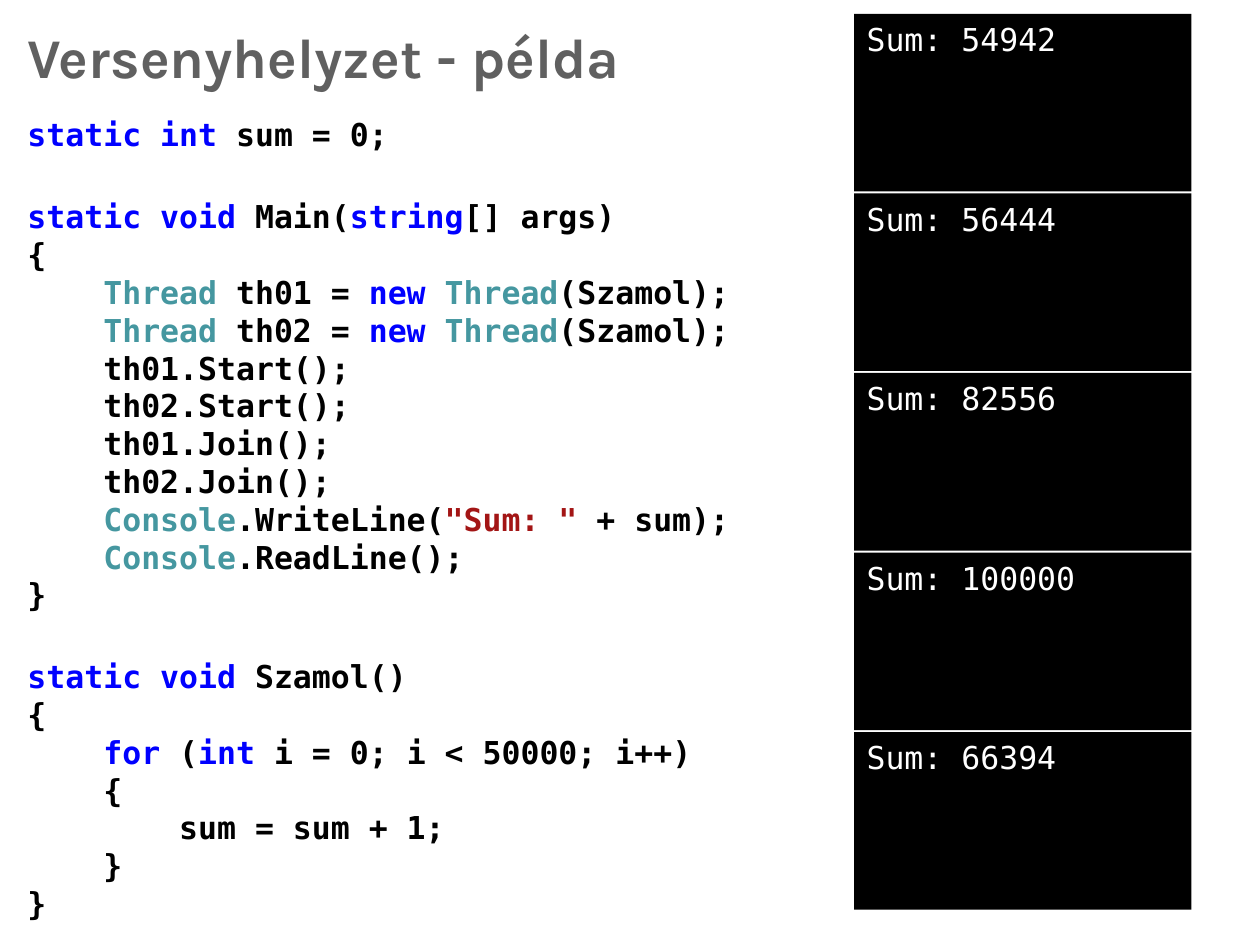
"""Build the race condition example slide."""
from dataclasses import dataclass
from itertools import groupby

from lxml.etree import SubElement
from pptx import Presentation
from pptx.dml.color import RGBColor as Rgb
from pptx.enum.shapes import MSO_SHAPE as Preset
from pptx.enum.text import MSO_ANCHOR as Anchor, MSO_AUTO_SIZE as AutoSize, PP_ALIGN as Align
from pptx.oxml.ns import qn
from pptx.util import Cm, Pt


@dataclass(frozen=True)
class Theme:
    """Colours, fonts and type sizes of the slide."""
    white: str = "FFFFFF"
    black: str = "000000"
    heading: str = "606060"
    keyword: str = "0000FF"
    type_name: str = "4597A0"
    string: str = "A31515"
    heading_font: str = "Karla"
    code_font: str = "DejaVu Sans Mono"
    heading_size: int = 32
    code_size: int = 18
    block_gap: float = 25.2


THEME = Theme()
KEYWORDS = {"static", "int", "void", "string", "new", "for"}
TYPE_NAMES = {"Thread", "Console"}
CODE_BLOCKS = [
    "static int sum = 0;",
    """static void Main(string[] args)
{
    Thread th01 = new Thread(Szamol);
    Thread th02 = new Thread(Szamol);
    th01.Start();
    th02.Start();
    th01.Join();
    th02.Join();
    Console.WriteLine("Sum: " + sum);
    Console.ReadLine();
}""",
    """static void Szamol()
{
    for (int i = 0; i < 50000; i++)
    {
        sum = sum + 1;
    }
}""",
]
OUTPUTS = ["Sum: 54942", "Sum: 56444", "Sum: 82556", "Sum: 100000", "Sum: 66394"]


def apply(target, values):
    """Set each attribute in values on the target."""
    for name, value in values.items():
        setattr(target, name, value)


def place(shape, left, top, width, height):
    """Move and size a shape, with lengths in centimetres."""
    apply(shape, {"left": Cm(left), "top": Cm(top), "width": Cm(width), "height": Cm(height)})


def fill(shape, colour):
    """Give a shape a solid fill."""
    shape.fill.solid()
    shape.fill.fore_color.rgb = Rgb.from_string(colour)


def set_frame(shape, anchor):
    """Set wrapping and anchoring of the text in a shape."""
    apply(shape.text_frame, {"word_wrap": True, "auto_size": AutoSize.NONE,
                             "vertical_anchor": anchor})


def add_run(paragraph, text, font, size, colour, bold):
    """Append formatted text to a left-aligned paragraph."""
    paragraph.alignment = Align.LEFT
    run = paragraph.add_run()
    run.text = text
    apply(run.font, {"name": font, "size": Pt(size), "bold": bold})
    run.font.color.rgb = Rgb.from_string(colour)


def word_colour(word):
    """Return the syntax colour of a word."""
    if word in KEYWORDS:
        return THEME.keyword
    return THEME.type_name if word in TYPE_NAMES else THEME.black


def colour_pieces(line):
    """Yield the words, strings and symbols of a code line with their colours."""
    for index, part in enumerate(line.split('"')):
        if index % 2:
            yield f'"{part}"', THEME.string
        else:
            for _, letters in groupby(part, str.isalnum):
                word = "".join(letters)
                yield word, word_colour(word)


def add_code_line(paragraph, line, space_before):
    """Write one highlighted code line without a bullet."""
    properties = paragraph._p.get_or_add_pPr()
    properties.set("marL", "0")
    properties.set("indent", "0")
    SubElement(properties, qn("a:buNone"))
    apply(paragraph, {"space_before": Pt(space_before), "space_after": Pt(0)})
    for colour, pieces in groupby(colour_pieces(line), lambda piece: piece[1]):
        text = "".join(piece[0] for piece in pieces)
        add_run(paragraph, text, THEME.code_font, THEME.code_size, colour, True)


def write_title(title, text):
    """Place and write the slide title."""
    place(title, 0.3, 0.33, 24.8, 1.6)
    set_frame(title, Anchor.MIDDLE)
    add_run(title.text_frame.paragraphs[0], text, THEME.heading_font,
            THEME.heading_size, THEME.heading, True)


def write_code(body, blocks):
    """Place the body and write code blocks separated by paragraph spacing."""
    place(body, 0.3, 2.2, 24.8, 16.5)
    fill(body, THEME.white)
    set_frame(body, Anchor.TOP)
    frame = body.text_frame
    for block_index, block in enumerate(blocks):
        for line_index, line in enumerate(block.splitlines()):
            starts_block = line_index == 0
            first = starts_block and block_index == 0
            paragraph = frame.paragraphs[0] if first else frame.add_paragraph()
            gap = THEME.block_gap if starts_block and not first else 0
            add_code_line(paragraph, line, gap)


def add_console(slide, text, top):
    """Add a black console window with one output line."""
    console = slide.shapes.add_shape(Preset.RECTANGLE, 0, 0, 0, 0)
    place(console, 17.22, top, 6.8, 3.58)
    fill(console, THEME.black)
    console.line.fill.background()
    console.shadow.inherit = False
    set_frame(console, Anchor.TOP)
    add_run(console.text_frame.paragraphs[0], text, THEME.code_font,
            THEME.code_size, THEME.white, False)


def main():
    """Build and save the presentation."""
    presentation = Presentation()
    apply(presentation, {"slide_width": Cm(25.4), "slide_height": Cm(19.05)})
    slide = presentation.slides.add_slide(presentation.slide_layouts[1])
    write_title(slide.shapes.title, "Versenyhelyzet - példa")
    write_code(slide.placeholders[1], CODE_BLOCKS)
    for index, output in enumerate(OUTPUTS):
        add_console(slide, output, 0.28 + index * 3.62)
    presentation.save("out.pptx")


if __name__ == "__main__":
    main()
